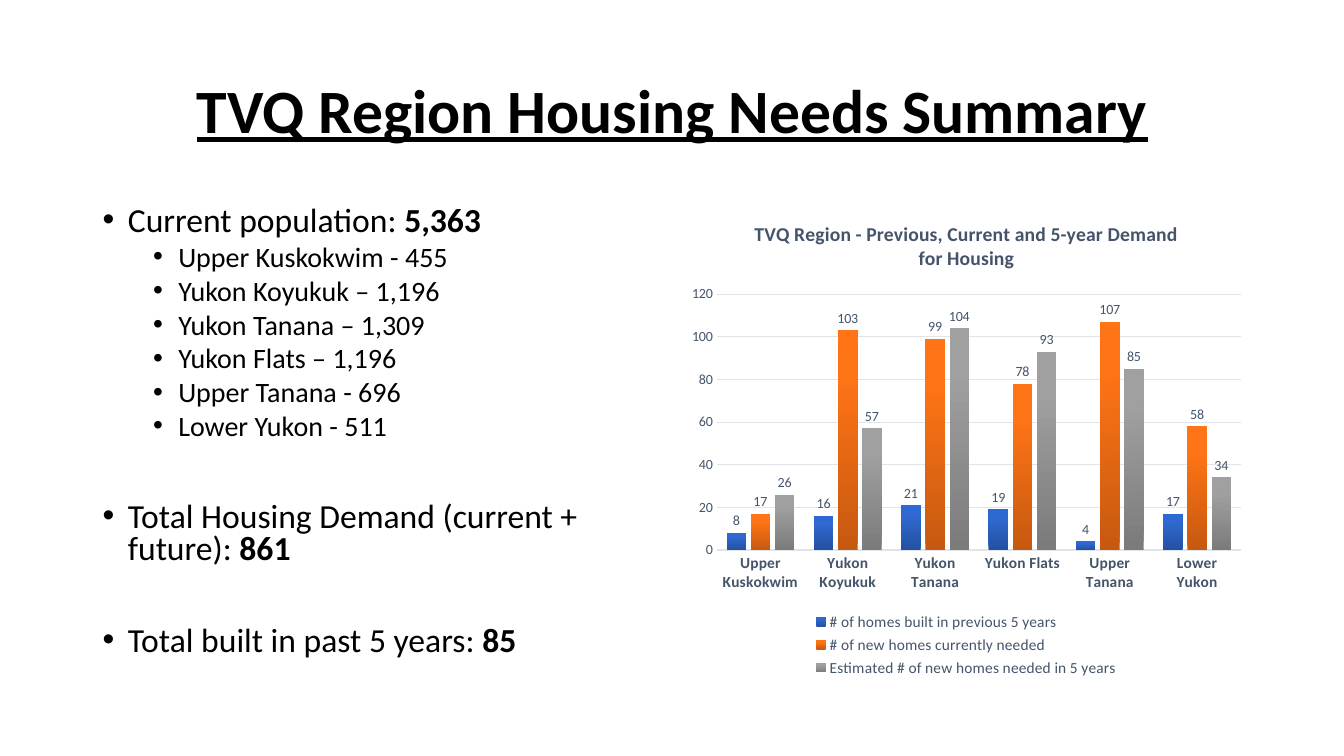
"""Build the regional housing needs summary slide."""
import copy

import pptx
import pptx.chart.data
import pptx.dml.color
import pptx.enum.chart
import pptx.enum.text
import pptx.oxml.ns
import pptx.util

Inches = pptx.util.Inches
Pt = pptx.util.Pt
RGBColor = pptx.dml.color.RGBColor
qn = pptx.oxml.ns.qn

BLACK = RGBColor(0x00, 0x00, 0x00)
SLATE = RGBColor(0x44, 0x54, 0x6A)
PALE = RGBColor(0xE0, 0xE5, 0xEB)
BLUES = (RGBColor(0x24, 0x51, 0xA1), RGBColor(0x2F, 0x69, 0xD1), RGBColor(0x2C, 0x69, 0xD5))
REDS = (RGBColor(0xC6, 0x59, 0x10), RGBColor(0xFF, 0x74, 0x16), RGBColor(0xFF, 0x75, 0x17))
GRAYS = (RGBColor(0x7B, 0x7B, 0x7B), RGBColor(0xA0, 0xA0, 0xA0), RGBColor(0xA1, 0xA1, 0xA1))

TOWNS = ["Upper Kuskokwim", "Yukon Koyukuk", "Yukon Tanana",
         "Yukon Flats", "Upper Tanana", "Lower Yukon"]
SERIES = [
    ("# of homes built in previous 5 years", (8, 16, 21, 19, 4, 17), BLUES),
    ("# of new homes currently needed", (17, 103, 99, 78, 107, 58), REDS),
    ("Estimated # of new homes needed in 5 years", (26, 57, 104, 93, 85, 34), GRAYS),
]
COUNTS = ["- 455", "– 1,196", "– 1,309", "– 1,196", "- 696", "- 511"]
POINTS = [
    (0, 10, "Current population: ", "5,363"),
    *[(1, 5, f"{town} {count}", "") for town, count in zip(TOWNS, COUNTS)],
    (0, 43, "Total Housing Demand (current + future): ", "861"),
    (0, 43, "Total built in past 5 years: ", "85"),
]


class Deck:
    """Hold the style and the current slide."""

    face = "Calibri"

    def __init__(self):
        """Start a wide deck with one blank slide."""
        self.prs = pptx.Presentation()
        self.prs.slide_width = Inches(13.33)
        self.prs.slide_height = Inches(7.5)
        self.slide = self.prs.slides.add_slide(self.prs.slide_layouts[6])

    def style(self, font, size, color, bold=False):
        """Set the look of one font."""
        font.name = self.face
        font.size = Pt(size)
        font.color.rgb = color
        font.bold = bold

    def box(self, left, top, width, height):
        """Add a wrapping text box and return its frame."""
        shape = self.slide.shapes.add_textbox(
            Inches(left), Inches(top), Inches(width), Inches(height))
        shape.text_frame.word_wrap = True
        return shape.text_frame

    def title(self, text, *area):
        """Add the underlined heading."""
        frame = self.box(*area)
        frame.vertical_anchor = pptx.enum.text.MSO_ANCHOR.MIDDLE
        frame.text = text
        para = frame.paragraphs[0]
        para.alignment = pptx.enum.text.PP_ALIGN.CENTER
        para.line_spacing = 0.9
        font = para.runs[0].font
        self.style(font, 44, BLACK, True)
        font.underline = True

    def bullets(self, points, *area):
        """Add a two-level list with bold totals."""
        frame = self.box(*area)
        for index, (level, gap, text, total) in enumerate(points):
            para = frame.add_paragraph() if index else frame.paragraphs[0]
            para.text = text
            para.level = level
            para.line_spacing = 0.8
            para.space_before = Pt(gap)
            size = 20 if level else 24
            self.style(para.runs[0].font, size, BLACK)
            if total:
                run = para.add_run()
                run.text = total
                self.style(run.font, size, BLACK, True)
            props = para._p.get_or_add_pPr()
            props.set("marL", str(Inches(0.25 + 0.5 * level)))
            props.set("indent", str(Inches(-0.25)))
            props.append(props.makeelement(qn("a:buFont"), {"typeface": "Arial"}))
            props.append(props.makeelement(qn("a:buChar"), {"char": "•"}))

    def shade(self, series, colors):
        """Fill a series with an upward three-stop gradient."""
        fill = series.format.fill
        fill.gradient()
        fill.gradient_angle = 90
        stops = series._element.find(".//" + qn("a:gsLst"))
        stops.append(copy.deepcopy(stops[-1]))
        for stop, place, color in zip(fill.gradient_stops, (0, 0.8, 1), colors):
            stop.position = place
            stop.color.rgb = color

    def chart(self, head, towns, series, *area):
        """Add the clustered column chart."""
        kinds = pptx.enum.chart
        data = pptx.chart.data.CategoryChartData()
        data.categories = towns
        for name, values, _ in series:
            data.add_series(name, values)
        chart = self.slide.shapes.add_chart(
            kinds.XL_CHART_TYPE.COLUMN_CLUSTERED, *map(Inches, area), data).chart
        self.style(chart.font, 10, BLACK)
        chart.chart_title.text_frame.text = head
        run = chart.chart_title.text_frame.paragraphs[0].runs[0]
        self.style(run.font, 14, SLATE, True)
        chart.chart_title.include_in_layout = False

        chart.has_legend = True
        chart.legend.position = kinds.XL_LEGEND_POSITION.BOTTOM
        chart.legend.include_in_layout = False
        self.style(chart.legend.font, 11, SLATE)

        for axis, size, bold in ((chart.category_axis, 11, True),
                                 (chart.value_axis, 10, False)):
            axis.major_tick_mark = kinds.XL_TICK_MARK.NONE
            axis.minor_tick_mark = kinds.XL_TICK_MARK.NONE
            self.style(axis.tick_labels.font, size, SLATE, bold)
        chart.value_axis.format.line.fill.background()
        for line in (chart.category_axis.format.line,
                     chart.value_axis.major_gridlines.format.line):
            line.color.rgb = PALE
            line.width = Pt(0.75)

        plot = chart.plots[0]
        plot.vary_by_categories = False
        plot.gap_width = 100
        plot.overlap = -24
        for bars, (_, _, colors) in zip(plot.series, series):
            self.shade(bars, colors)
            labels = bars.data_labels
            labels.show_value = True
            labels.position = kinds.XL_LABEL_POSITION.OUTSIDE_END
            self.style(labels.font, 10, SLATE)


def main():
    """Build and save the slide."""
    deck = Deck()
    deck.title("TVQ Region Housing Needs Summary", 0.92, 0.4, 11.5, 1.45)
    deck.bullets(POINTS, 0.92, 2, 5.67, 4.76)
    deck.chart("TVQ Region - Previous, Current and 5-year Demand for Housing",
               TOWNS, SERIES, 6.75, 2, 5.67, 4.76)
    deck.prs.save("out.pptx")


if __name__ == "__main__":
    main()
